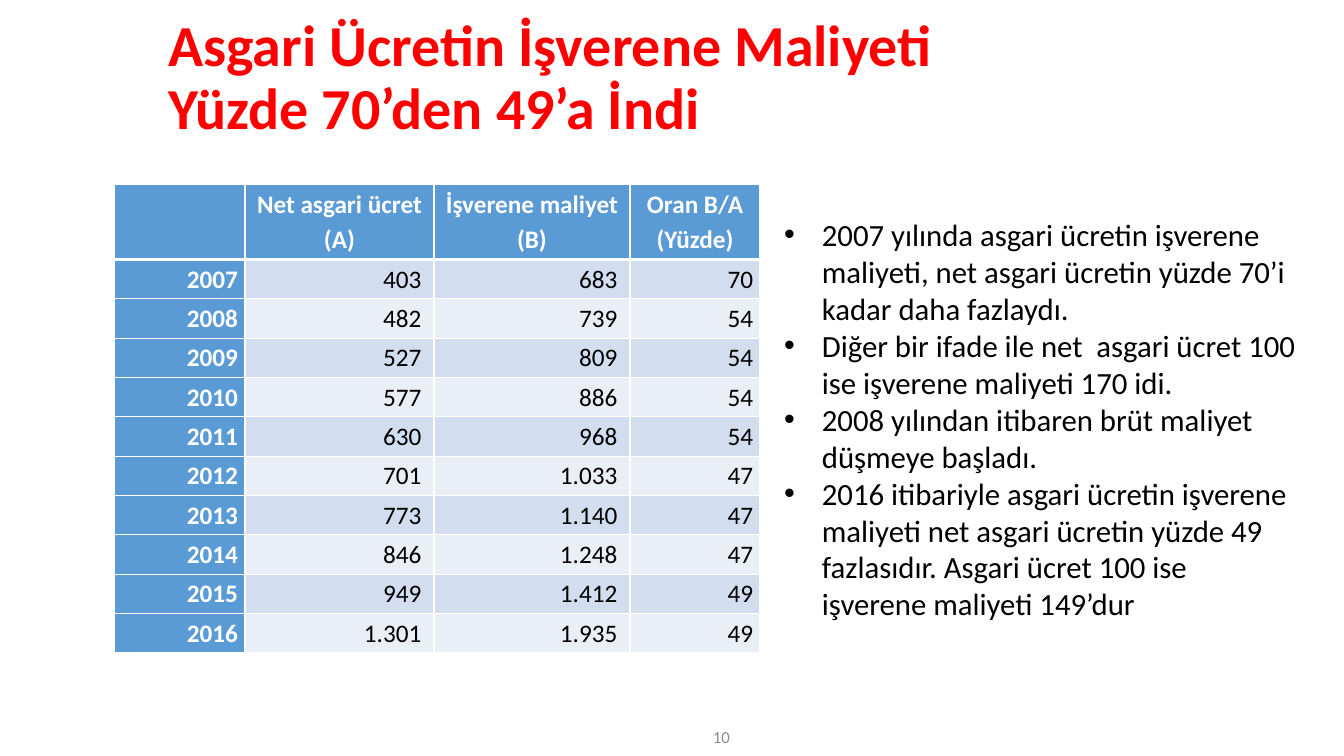
from lxml import etree
from pptx import Presentation
from pptx.dml.color import RGBColor
from pptx.enum.text import MSO_ANCHOR, MSO_AUTO_SIZE, PP_ALIGN
from pptx.oxml.ns import qn
from pptx.util import Pt

LEFT, CENTER, RIGHT = PP_ALIGN.LEFT, PP_ALIGN.CENTER, PP_ALIGN.RIGHT
TOP, MIDDLE = MSO_ANCHOR.TOP, MSO_ANCHOR.MIDDLE
NO_AUTOFIT = MSO_AUTO_SIZE.NONE
TITLE_ONLY = 5

FONT = "Calibri"
RED, BLACK, WHITE, GREY = "FF0000", "000000", "FFFFFF", "8C8C8C"
BLUE = "5B9BD5"
BANDS = ("D2DEEF", "EAEFF7")

TITLE = "Asgari Ücretin İşverene Maliyeti\vYüzde 70’den 49’a İndi"
HEADERS = ("", "Net asgari ücret (A)", "İşverene maliyet (B)", "Oran B/A (Yüzde)")
WAGES = (
    ("2007", "403", "683", "70"),
    ("2008", "482", "739", "54"),
    ("2009", "527", "809", "54"),
    ("2010", "577", "886", "54"),
    ("2011", "630", "968", "54"),
    ("2012", "701", "1.033", "47"),
    ("2013", "773", "1.140", "47"),
    ("2014", "846", "1.248", "47"),
    ("2015", "949", "1.412", "49"),
    ("2016", "1.301", "1.935", "49"),
)
COLUMN_WIDTHS = (93, 135, 140, 93)
RIGHT_MARGINS = (5, 9, 9, 5)
HEADER_HEIGHT, ROW_HEIGHT = 53.4, 28.1
NOTES = (
    "2007 yılında asgari ücretin işverene maliyeti, net asgari ücretin yüzde 70’i "
    "kadar daha fazlaydı.",
    "Diğer bir ifade ile net  asgari ücret 100 ise işverene maliyeti 170 idi.",
    "2008 yılından itibaren brüt maliyet düşmeye başladı.",
    "2016 itibariyle asgari ücretin işverene maliyeti net asgari ücretin yüzde 49 "
    "fazlasıdır. Asgari ücret 100 ise işverene maliyeti 149’dur",
)


def color(hex_string):
    return RGBColor.from_string(hex_string)


def format_paragraph(paragraph, size, hex_color, bold=False, align=LEFT, spacing=None):
    paragraph.alignment = align
    paragraph.line_spacing = spacing
    paragraph.font.name = FONT
    paragraph.font.size = Pt(size)
    paragraph.font.bold = bold
    paragraph.font.color.rgb = color(hex_color)


def add_bullet(paragraph, indent):
    properties = paragraph._p.get_or_add_pPr()
    properties.set("marL", str(Pt(indent)))
    properties.set("indent", str(-Pt(indent)))
    etree.SubElement(properties, qn("a:buFont"), typeface="Arial")
    etree.SubElement(properties, qn("a:buChar"), char="•")


def set_title(slide, text):
    title = slide.shapes.title
    title.left, title.top, title.width, title.height = Pt(113), Pt(10), Pt(819), Pt(93)
    frame = title.text_frame
    frame.text = text
    frame.auto_size = NO_AUTOFIT
    frame.vertical_anchor = MIDDLE
    format_paragraph(frame.paragraphs[0], 41.4, RED, bold=True, spacing=0.9)


def add_text(slide, left, top, width, height, lines, size, hex_color,
             align=LEFT, anchor=TOP, bullet_indent=None):
    frame = slide.shapes.add_textbox(Pt(left), Pt(top), Pt(width), Pt(height)).text_frame
    frame.word_wrap = True
    frame.vertical_anchor = anchor
    frame.text = "\n".join(lines)
    for paragraph in frame.paragraphs:
        if bullet_indent:
            add_bullet(paragraph, bullet_indent)
        format_paragraph(paragraph, size, hex_color, align=align)


def add_borders(cell, bottom_width):
    properties = cell._tc.get_or_add_tcPr()
    for side, width in (("lnL", 1), ("lnR", 1), ("lnT", 1), ("lnB", bottom_width)):
        line = etree.SubElement(properties, qn(f"a:{side}"), w=str(Pt(width)))
        fill = etree.SubElement(line, qn("a:solidFill"))
        etree.SubElement(fill, qn("a:srgbClr"), val=WHITE)


def fill_cell(cell, text, row, column):
    is_header = row == 0
    is_label = is_header or column == 0
    add_borders(cell, 3 if is_header else 1)
    cell.fill.solid()
    cell.fill.fore_color.rgb = color(BLUE if is_label else BANDS[(row - 1) % 2])
    cell.margin_left = Pt(5)
    cell.margin_right = Pt(5 if is_header else RIGHT_MARGINS[column])
    cell.margin_top = cell.margin_bottom = 0
    cell.text = text
    format_paragraph(cell.text_frame.paragraphs[0], 18, WHITE if is_label else BLACK,
                     bold=is_label, align=CENTER if is_header else RIGHT, spacing=1.15)


def add_wage_table(slide, left, top):
    rows = (HEADERS, *WAGES)
    height = HEADER_HEIGHT + ROW_HEIGHT * len(WAGES)
    table = slide.shapes.add_table(len(rows), len(HEADERS), Pt(left), Pt(top),
                                   Pt(sum(COLUMN_WIDTHS)), Pt(height)).table
    for column, width in zip(table.columns, COLUMN_WIDTHS):
        column.width = Pt(width)
    for row, values in enumerate(rows):
        table.rows[row].height = Pt(ROW_HEIGHT if row else HEADER_HEIGHT)
        for column, text in enumerate(values):
            fill_cell(table.cell(row, column), text, row, column)


def main():
    presentation = Presentation()
    presentation.slide_width, presentation.slide_height = Pt(960), Pt(540)
    slide = presentation.slides.add_slide(presentation.slide_layouts[TITLE_ONLY])

    # Heading
    set_title(slide, TITLE)
    # Wages and employer costs by year
    add_wage_table(slide, 82, 132)
    # Explanations beside the table
    add_text(slide, 553, 150.5, 379.5, 300, NOTES, 22, BLACK, bullet_indent=27)
    # Page number
    add_text(slide, 312.5, 512, 216, 28.8, ["10"], 12, GREY, align=RIGHT, anchor=MIDDLE)

    presentation.save("out.pptx")


if __name__ == "__main__":
    main()
